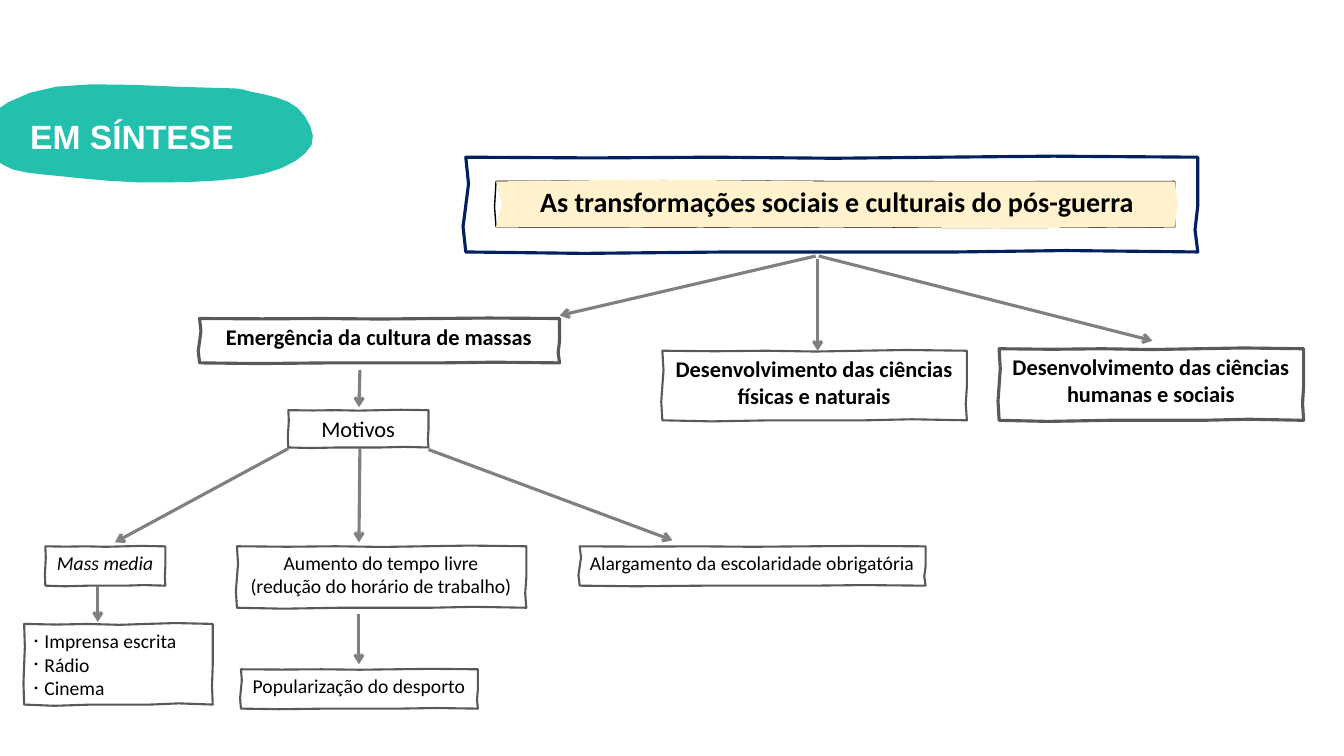
"""Build the summary slide on post-war social and cultural change."""
from dataclasses import dataclass
from typing import Any

from lxml.etree import SubElement
from pptx import Presentation
from pptx.dml.color import RGBColor
from pptx.enum.shapes import MSO_CONNECTOR
from pptx.enum.text import MSO_ANCHOR, MSO_AUTO_SIZE, PP_ALIGN
from pptx.oxml.ns import qn
from pptx.util import Inches, Pt

SKETCHED_BOX = [
    (0, 0),
    (0.13, 0.01), (0.22, 0.01), (0.34, 0),
    (0.47, -0.01), (0.54, 0.04), (0.65, 0),
    (0.75, -0.03), (0.84, 0), (1, 0),
    (0.99, 0.23), (1.01, 0.34), (1, 0.51),
    (0.99, 0.69), (1, 0.85), (1, 1),
    (0.87, 0.99), (0.76, 0.97), (0.67, 1),
    (0.57, 1.03), (0.5, 0.97), (0.36, 1),
    (0.22, 1.03), (0.09, 1.01), (0, 1),
    (0, 0.82), (-0.01, 0.63), (0, 0.51),
    (0.01, 0.38), (0, 0.2), (0, 0),
]
TITLE_BLOB = [
    (2.07, 0.87),
    (1.75, 0.87), (0.93, 0.8), (0.56, 0.86),
    (0.18, 0.91), (-0.09, 1.1), (-0.18, 1.23),
    (-0.27, 1.36), (-0.11, 1.54), (0.02, 1.63),
    (0.15, 1.72), (0.35, 1.72), (0.62, 1.75),
    (0.89, 1.78), (1.28, 1.82), (1.62, 1.81),
    (1.95, 1.81), (2.38, 1.79), (2.63, 1.72),
    (2.87, 1.66), (3.03, 1.55), (3.09, 1.44),
    (3.14, 1.33), (3.05, 1.16), (2.95, 1.07),
    (2.86, 0.98), (2.64, 0.94), (2.49, 0.91),
    (2.35, 0.87), (2.39, 0.88), (2.07, 0.87),
]
HEADLINE_OUTLINE = [
    (4.92, 1.8),
    (6.03, 1.79), (7.17, 1.79), (8.15, 1.8),
    (9.12, 1.81), (10.18, 1.8), (11.65, 1.8),
    (11.75, 1.95), (11.56, 2.06), (11.65, 2.25),
    (10.46, 2.28), (9.11, 2.24), (8.28, 2.25),
    (7.46, 2.26), (6.48, 2.25), (4.92, 2.25),
    (4.86, 2.16), (4.94, 1.96), (4.92, 1.8),
]
HEADLINE_BRUSH = [
    (4.92, 1.8),
    (5.98, 1.79), (6.78, 1.76), (8.21, 1.8),
    (9.65, 1.83), (10.89, 1.77), (11.65, 1.8),
    (11.65, 1.99), (11.74, 2.06), (11.65, 2.25),
    (10.5, 2.27), (9.11, 2.27), (8.42, 2.25),
    (7.72, 2.23), (6.37, 2.29), (4.92, 2.25),
    (4.98, 2.1), (5.01, 1.92), (4.92, 1.8),
]


def colour(hex_code):
    """Turn a hex string into a colour."""
    return RGBColor.from_string(hex_code)


def trace(curve, steps):
    """Sample a chain of cubic Bézier curves as a list of points."""
    points = [curve[0]]
    for first in range(0, len(curve) - 1, 3):
        a, b, c, d = curve[first:first + 4]
        for step in range(1, steps + 1):
            t = step / steps
            u = 1 - t
            points.append(tuple(
                u**3 * a[i] + 3 * u * u * t * b[i] + 3 * u * t * t * c[i] + t**3 * d[i]
                for i in (0, 1)))
    return points


@dataclass
class ConceptMap:
    """Hold the style and the current slide."""

    slide: Any
    text_font: str = "Calibri"
    title_font: str = "Arial"
    ink: str = "000000"
    border: str = "595959"
    arrow_grey: str = "808080"

    def style_runs(self, frame, size, bold=False, italic=False, font=None, ink=None):
        """Format every run of a text frame."""
        for paragraph in frame.paragraphs:
            for run in paragraph.runs:
                run.font.name = font or self.text_font
                run.font.size = Pt(size)
                run.font.bold = bold
                run.font.italic = italic
                run.font.color.rgb = colour(ink or self.ink)

    def outline(self, curve, fill=None, line=None, width=1.5, steps=2):
        """Draw a closed curved outline given in inches."""
        points = [(Inches(x), Inches(y)) for x, y in trace(curve, steps)]
        builder = self.slide.shapes.build_freeform(*points[0], scale=1.0)
        builder.add_line_segments(points[1:-1], close=True)
        shape = builder.convert_to_shape()
        shape.shadow.inherit = False
        if fill:
            shape.fill.solid()
            shape.fill.fore_color.rgb = colour(fill)
        else:
            shape.fill.background()
        if line:
            shape.line.color.rgb = colour(line)
            shape.line.width = Pt(width)
        else:
            shape.line.fill.background()
        return shape

    def box(self, left, top, width, height, line=None, weight=1.5):
        """Draw a box with hand-sketched sides."""
        curve = [(left + x * width, top + y * height) for x, y in SKETCHED_BOX]
        return self.outline(curve, line=line or self.border, width=weight)

    def label(self, shape, text, size, bold=False, italic=False):
        """Write centred text at the top of a shape."""
        frame = shape.text_frame
        frame.text = text
        frame.word_wrap = True
        frame.vertical_anchor = MSO_ANCHOR.TOP
        frame.margin_left = frame.margin_right = Inches(0.05)
        for paragraph in frame.paragraphs:
            paragraph.alignment = PP_ALIGN.CENTER
        self.style_runs(frame, size, bold, italic)

    def arrow(self, x1, y1, x2, y2):
        """Draw an arrow between two points."""
        connector = self.slide.shapes.add_connector(
            MSO_CONNECTOR.STRAIGHT, Inches(x1), Inches(y1), Inches(x2), Inches(y2))
        connector.line.color.rgb = colour(self.arrow_grey)
        connector.line.width = Pt(2.25)
        SubElement(connector.element.spPr.find(qn("a:ln")), qn("a:tailEnd"), type="arrow")
        SubElement(connector.element.spPr, qn("a:effectLst"))

    def place(self, holder, left, top, width, height, text, anchor):
        """Move a placeholder and fill in its text."""
        holder.left, holder.top = Inches(left), Inches(top)
        holder.width, holder.height = Inches(width), Inches(height)
        frame = holder.text_frame
        frame.text = text
        frame.word_wrap = True
        frame.auto_size = MSO_AUTO_SIZE.NONE
        frame.vertical_anchor = anchor
        return frame

    def title(self, text):
        """Write the slide title over its coloured blob."""
        holder = self.slide.shapes.title
        frame = self.place(holder, 0.2, 1.09, 2.77, 0.51, text, MSO_ANCHOR.MIDDLE)
        frame.paragraphs[0].alignment = PP_ALIGN.LEFT
        self.style_runs(frame, 24, bold=True, font=self.title_font, ink="FFFFFF")
        blob = self.outline(TITLE_BLOB, fill="22C0AD", steps=4)
        holder.element.addprevious(blob.element)

    def bullets(self, left, top, width, height, items):
        """Write a bulleted list in a sketched box."""
        frame = self.place(self.slide.placeholders[1], left, top, width, height,
                           "\n".join(items), MSO_ANCHOR.TOP)
        for paragraph in frame.paragraphs:
            paragraph.space_before = Pt(0)
            properties = paragraph._p.get_or_add_pPr()
            properties.set("marL", str(Inches(0.1)))
            properties.set("indent", str(Inches(-0.1)))
            SubElement(properties, qn("a:buSzPct"), val="50000")
            SubElement(properties, qn("a:buChar"), char="▪")
        self.style_runs(frame, 14)
        self.box(left, top, width, height)


def main():
    """Build and save the slide."""
    deck = Presentation()
    deck.slide_width, deck.slide_height = Inches(13.33), Inches(7.5)
    concept_map = ConceptMap(deck.slides.add_slide(deck.slide_layouts[1]))

    concept_map.title("EM SÍNTESE")
    concept_map.box(4.62, 1.56, 7.26, 0.94, line="002060", weight=2.25)
    concept_map.outline(HEADLINE_OUTLINE, line="000000", width=1)
    headline = concept_map.outline(HEADLINE_BRUSH, fill="FFF2CC")
    concept_map.label(headline, "As transformações sociais e culturais do pós-guerra", 20, bold=True)

    themes = [
        (1.98, 3.16, 3.57, 0.44, 2.25, "Emergência da cultura de massas"),
        (6.57, 3.48, 3.02, 0.69, 1.5, "Desenvolvimento das ciências físicas e naturais"),
        (9.91, 3.46, 3.02, 0.71, 2.25, "Desenvolvimento das ciências humanas e sociais"),
    ]
    for *place, weight, theme in themes:
        concept_map.label(concept_map.box(*place, weight=weight), theme, 16, bold=True)

    concept_map.label(concept_map.box(2.86, 4.07, 1.39, 0.37), "Motivos", 16)
    reasons = [
        (0.45, 5.42, 1.19, 0.39, "Mass media", True),
        (2.35, 5.42, 2.87, 0.61, "Aumento do tempo livre\n(redução do horário de trabalho)", False),
        (5.75, 5.42, 3.43, 0.39, "Alargamento da escolaridade obrigatória", False),
        (2.39, 6.64, 2.35, 0.39, "Popularização do desporto", False),
    ]
    for *place, reason, italic in reasons:
        concept_map.label(concept_map.box(*place), reason, 14, italic=italic)
    concept_map.bullets(0.24, 6.19, 1.87, 0.8, ["Imprensa escrita", "Rádio", "Cinema"])

    links = [
        (8.09, 2.54, 5.55, 3.13), (8.11, 2.57, 8.11, 3.48), (8.12, 2.54, 11.43, 3.38),
        (3.57, 3.67, 3.56, 4.04),
        (2.86, 4.45, 1.14, 5.38), (3.57, 4.44, 3.56, 5.38), (4.25, 4.46, 6.67, 5.36),
        (0.97, 5.81, 0.97, 6.17), (3.56, 6.09, 3.56, 6.59),
    ]
    for link in links:
        concept_map.arrow(*link)
    deck.save("out.pptx")


if __name__ == "__main__":
    main()
